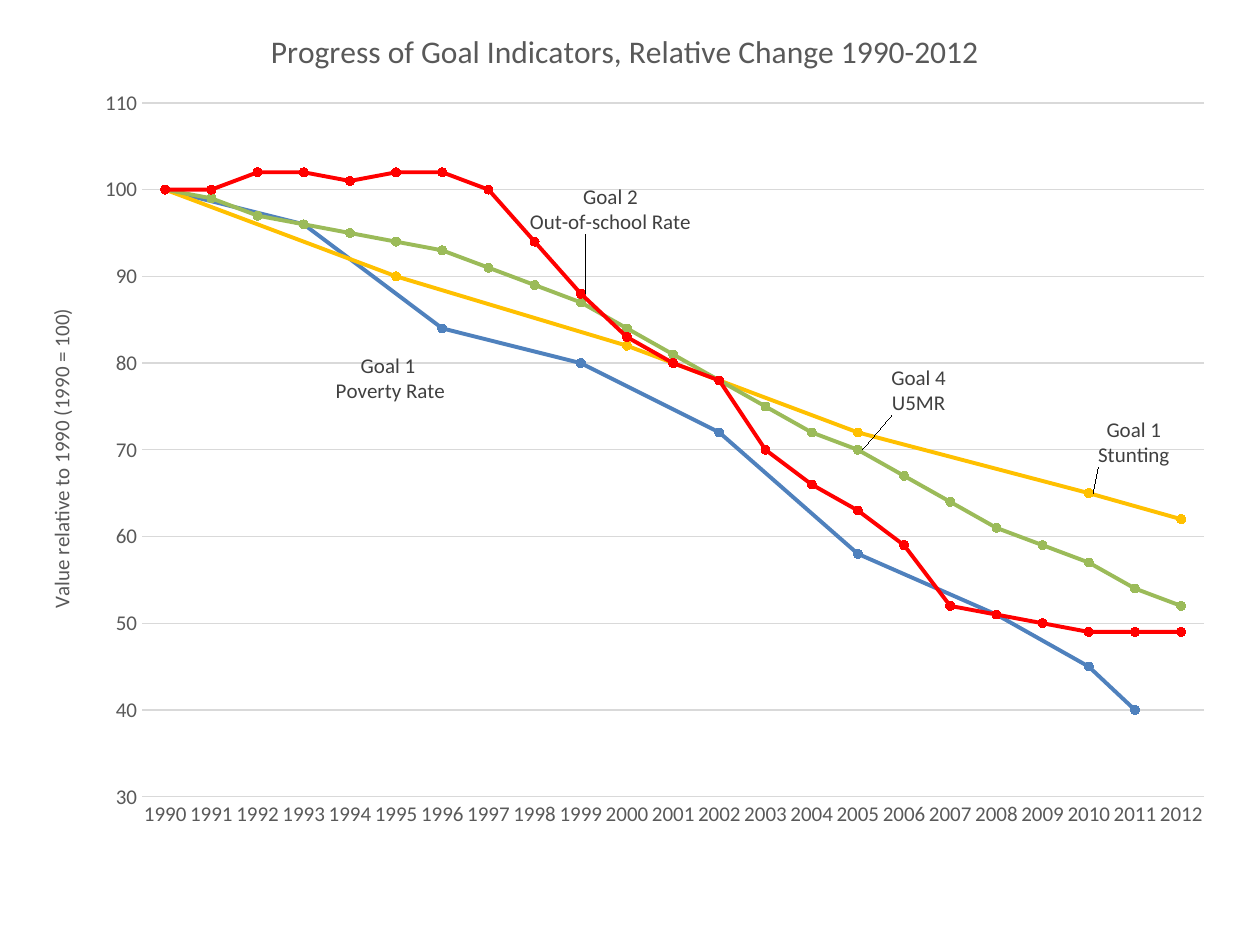
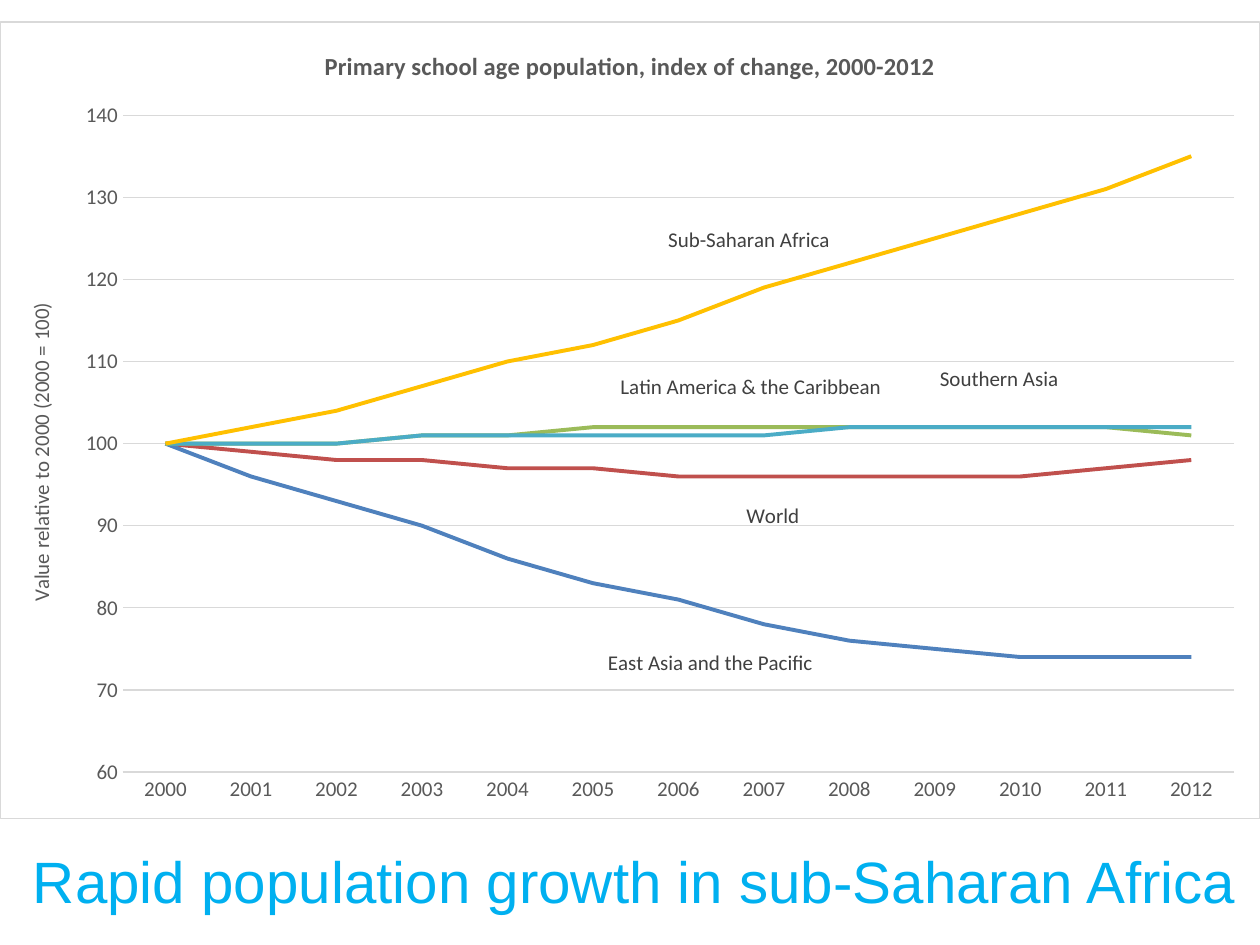
from dataclasses import dataclass
from typing import NamedTuple, Optional

from lxml.etree import SubElement
from pptx import Presentation
from pptx.chart.chart import Chart
from pptx.chart.data import CategoryChartData
from pptx.dml.color import RGBColor
from pptx.enum.chart import (XL_CHART_TYPE as ChartType, XL_LABEL_POSITION as LabelPosition,
                             XL_MARKER_STYLE as MarkerStyle, XL_TICK_MARK as TickMark)
from pptx.enum.text import MSO_ANCHOR, MSO_AUTO_SIZE, PP_ALIGN
from pptx.oxml import parse_xml
from pptx.oxml.ns import nsdecls, qn
from pptx.util import Inches, Pt

# Shared look
COLORS = {
    "blue": "4F81BD", "red": "C0504D", "green": "9BBB59", "aqua": "4BACC6",
    "amber": "FFC000", "scarlet": "FF0000", "headline": "00B0F0",
    "grid": "D9D9D9", "axis": "595959", "label": "404040",
}
CHART_FONT, HEADLINE_FONT = "Calibri", "Arial"
SLIDE_WIDTH, SLIDE_HEIGHT = Inches(10), Inches(7.5)
AXIS_STEP = 10
LABEL_EXT = "{CE6537A1-D6FC-4f65-9D91-7224C49458BB}"
C15 = "http://schemas.microsoft.com/office/drawing/2012/chart"


class Frame(NamedTuple):
    """Left, top, width and height in percent of the surrounding area."""
    left: float
    top: float
    width: float
    height: float

    def on_slide(self) -> tuple[int, int, int, int]:
        return (int(SLIDE_WIDTH * self.left / 100), int(SLIDE_HEIGHT * self.top / 100),
                int(SLIDE_WIDTH * self.width / 100), int(SLIDE_HEIGHT * self.height / 100))


@dataclass
class Trend:
    """One indicator; its label sits beside a year, shifted by shares of the chart."""
    name: str
    color: str
    values: dict[int, int]
    label_year: int
    shift: tuple[float, float]
    leader: bool = False


@dataclass
class TrendChart:
    title: str
    title_size: int
    title_bold: bool
    axis_title: str
    years: range
    axis_range: tuple[int, int]
    frame: Frame
    plot: Frame
    markers: bool
    border: Optional[str]
    trends: list[Trend]


def yearly(start: int, *values: int) -> dict[int, int]:
    return dict(enumerate(values, start))


# Content
GOAL_PROGRESS = TrendChart(
    "Progress of Goal Indicators, Relative Change 1990-2012", 18, False,
    "Value relative to 1990 (1990 = 100)", range(1990, 2013), (30, 110),
    Frame(1.7, 0, 95.8, 89.33), Frame(10, 12.2, 88, 82.2), True, None,
    [
        Trend("Goal 1\n Poverty Rate", "blue",
              {1990: 100, 1993: 96, 1996: 84, 1999: 80, 2002: 72, 2005: 58,
               2008: 51, 2010: 45, 2011: 40}, 1996, (-0.1, 0.06)),
        Trend("Goal 1\nStunting", "amber",
              {1990: 100, 1995: 90, 2000: 82, 2005: 72, 2010: 65, 2012: 62},
              2010, (0, -0.06), True),
        Trend("Goal 4\nU5MR", "green",
              yearly(1990, 100, 99, 97, 96, 95, 94, 93, 91, 89, 87, 84, 81, 78,
                     75, 72, 70, 67, 64, 61, 59, 57, 54, 52),
              2005, (0.02, -0.07), True),
        Trend("Goal 2\nOut-of-school Rate", "scarlet",
              yearly(1990, 100, 100, 102, 102, 101, 102, 102, 100, 94, 88, 83, 80,
                     78, 70, 66, 63, 59, 52, 51, 50, 49, 49, 49),
              1999, (-0.05, -0.1), True),
    ])

SCHOOL_POPULATION = TrendChart(
    "Primary school age population, index of change, 2000-2012", 14, True,
    "Value relative to 2000 (2000 = 100)", range(2000, 2013), (60, 140),
    Frame(0, 2.27, 100, 84.4), Frame(9.7, 11.7, 88.3, 82.5), False, "grid",
    [
        Trend("World", "red",
              yearly(2000, 100, 99, 98, 98, 97, 97, 96, 96, 96, 96, 96, 97, 98),
              2006, (0.05, 0.05)),
        Trend("East Asia and the Pacific", "blue",
              yearly(2000, 100, 96, 93, 90, 86, 83, 81, 78, 76, 75, 74, 74, 74),
              2006, (-0.06, 0.08)),
        Trend("Latin America & the Caribbean", "green",
              yearly(2000, 100, 100, 100, 101, 101, 102, 102, 102, 102, 102, 102, 102, 101),
              2006, (-0.05, -0.05)),
        Trend("Southern Asia", "aqua",
              yearly(2000, 100, 100, 100, 101, 101, 101, 101, 101, 102, 102, 102, 102, 102),
              2009, (0, -0.06)),
        Trend("Sub-Saharan Africa", "amber",
              yearly(2000, 100, 102, 104, 107, 110, 112, 115, 119, 122, 125, 128, 131, 135),
              2007, (-0.08, -0.06)),
    ])
HEADLINE = "Rapid population growth in sub-Saharan Africa"
HEADLINE_FRAME = Frame(0.8, 87.87, 99.2, 10.53)


# Formatting helpers
def rgb(color: str) -> RGBColor:
    return RGBColor.from_string(COLORS[color])


def style_font(font, size: float, color: str, name: str = CHART_FONT, bold: bool = False) -> None:
    font.size, font.name, font.bold = Pt(size), name, bold
    font.color.rgb = rgb(color)


def style_line(line, color: str, width: float) -> None:
    line.color.rgb = rgb(color)
    line.width = Pt(width)


def write_run(text_frame, text: str, size: float, color: str, **style) -> None:
    run = text_frame.paragraphs[0].add_run()
    run.text = text
    style_font(run.font, size, color, **style)


def manual_layout(**settings):
    parts = "".join(f'<c:{key} val="{value}"/>' for key, value in settings.items())
    return parse_xml(f'<c:layout {nsdecls("c")}><c:manualLayout>{parts}'
                     '</c:manualLayout></c:layout>')


# Chart parts
def place_plot(chart: Chart, plot: Frame) -> None:
    area = chart._chartSpace.chart.plotArea
    for layout in area.findall(qn("c:layout")):
        area.remove(layout)
    area.insert(0, manual_layout(
        layoutTarget="inner", xMode="edge", yMode="edge", x=plot.left / 100,
        y=plot.top / 100, w=plot.width / 100, h=plot.height / 100))


def frame_chart(chart: Chart, border: Optional[str]) -> None:
    space = chart._chartSpace
    if not space.xpath("c:roundedCorners"):
        space.xpath("c:date1904")[0].addnext(
            parse_xml(f'<c:roundedCorners {nsdecls("c")} val="0"/>'))
    stroke = (f'<a:solidFill><a:srgbClr val="{COLORS[border]}"/></a:solidFill>'
              if border else "<a:noFill/>")
    space.chart.addnext(parse_xml(
        f'<c:spPr {nsdecls("c", "a")}><a:noFill/><a:ln w="{Pt(0.75)}">{stroke}</a:ln></c:spPr>'))
    space.xpath("c:chart/c:dispBlanksAs")[0].set("val", "span")


def style_axes(chart: Chart, content: TrendChart) -> None:
    years, index = chart.category_axis, chart.value_axis
    for axis in (years, index):
        axis.major_tick_mark = axis.minor_tick_mark = TickMark.NONE
        style_font(axis.tick_labels.font, 12, "axis")
    style_line(years.format.line, "grid", 0.75)
    years._element.xpath("c:txPr/a:bodyPr")[0].set("rot", "-60000000")
    index.minimum_scale, index.maximum_scale = content.axis_range
    index.major_unit = AXIS_STEP
    index.tick_labels.number_format = "0"
    index.tick_labels.number_format_is_linked = False
    index.format.line.fill.background()
    index.has_major_gridlines = True
    style_line(index.major_gridlines.format.line, "grid", 0.75)
    write_run(index.axis_title.text_frame, content.axis_title, 12, "axis")


def label_trend(series, trend: Trend, years: range) -> None:
    series.data_labels.show_value = False
    label = series.points[years.index(trend.label_year)].data_label
    style_font(label.font, 12, "label")
    label.position = LabelPosition.RIGHT
    labels = series._element.find(qn("c:dLbls"))
    entry = labels.find(qn("c:dLbl"))
    entry.find(qn("c:idx")).addnext(manual_layout(x=trend.shift[0], y=trend.shift[1]))
    entry.find(qn("c:showVal")).set("val", "0")
    entry.find(qn("c:showSerName")).set("val", "1")
    # Leader lines of a line chart are switched in the labels and in an extension
    for old in labels.findall(qn("c:showLeaderLines")):
        labels.remove(old)
    leader = str(int(trend.leader))
    SubElement(labels, qn("c:showLeaderLines"), val=leader)
    extension = SubElement(SubElement(labels, qn("c:extLst")), qn("c:ext"),
                           uri=LABEL_EXT, nsmap={"c15": C15})
    SubElement(extension, f"{{{C15}}}showLeaderLines", val=leader)


def style_trend(series, trend: Trend, markers: bool) -> None:
    series.smooth = False
    style_line(series.format.line, trend.color, 2.25)
    if markers:
        series.marker.style, series.marker.size = MarkerStyle.CIRCLE, 5
        series.marker.format.fill.solid()
        series.marker.format.fill.fore_color.rgb = rgb(trend.color)
        style_line(series.marker.format.line, trend.color, 0.75)
    else:
        series.marker.style = MarkerStyle.NONE


def add_trend_chart(slide, content: TrendChart) -> None:
    data = CategoryChartData(number_format="0")
    data.categories = [str(year) for year in content.years]
    for trend in content.trends:
        data.add_series(trend.name, [trend.values.get(year) for year in content.years])
    kind = ChartType.LINE_MARKERS if content.markers else ChartType.LINE
    chart = slide.shapes.add_chart(kind, *content.frame.on_slide(), data).chart
    chart.has_legend = False
    chart.font.size, chart.font.name = Pt(10), CHART_FONT
    write_run(chart.chart_title.text_frame, content.title, content.title_size, "axis",
              bold=content.title_bold)
    chart.chart_title.include_in_layout = False
    chart.plots[0].vary_by_categories = False
    style_axes(chart, content)
    place_plot(chart, content.plot)
    frame_chart(chart, content.border)
    for series, trend in zip(chart.plots[0].series, content.trends):
        style_trend(series, trend, content.markers)
        label_trend(series, trend, content.years)


def set_headline(slide, text: str, frame: Frame) -> None:
    title = slide.shapes.title
    title.left, title.top, title.width, title.height = frame.on_slide()
    title.text_frame.word_wrap = True
    title.text_frame.auto_size = MSO_AUTO_SIZE.NONE
    title.text_frame.vertical_anchor = MSO_ANCHOR.MIDDLE
    title.text_frame.paragraphs[0].alignment = PP_ALIGN.CENTER
    write_run(title.text_frame, text, 33.3, "headline", name=HEADLINE_FONT)


def main() -> None:
    deck = Presentation()
    deck.slide_width, deck.slide_height = SLIDE_WIDTH, SLIDE_HEIGHT
    title_only, blank = deck.slide_layouts[5], deck.slide_layouts[6]

    # Slide 1: progress of the indicators
    add_trend_chart(deck.slides.add_slide(blank), GOAL_PROGRESS)

    # Slide 2: population by region
    population = deck.slides.add_slide(title_only)
    add_trend_chart(population, SCHOOL_POPULATION)
    set_headline(population, HEADLINE, HEADLINE_FRAME)

    deck.save("out.pptx")


if __name__ == "__main__":
    main()
